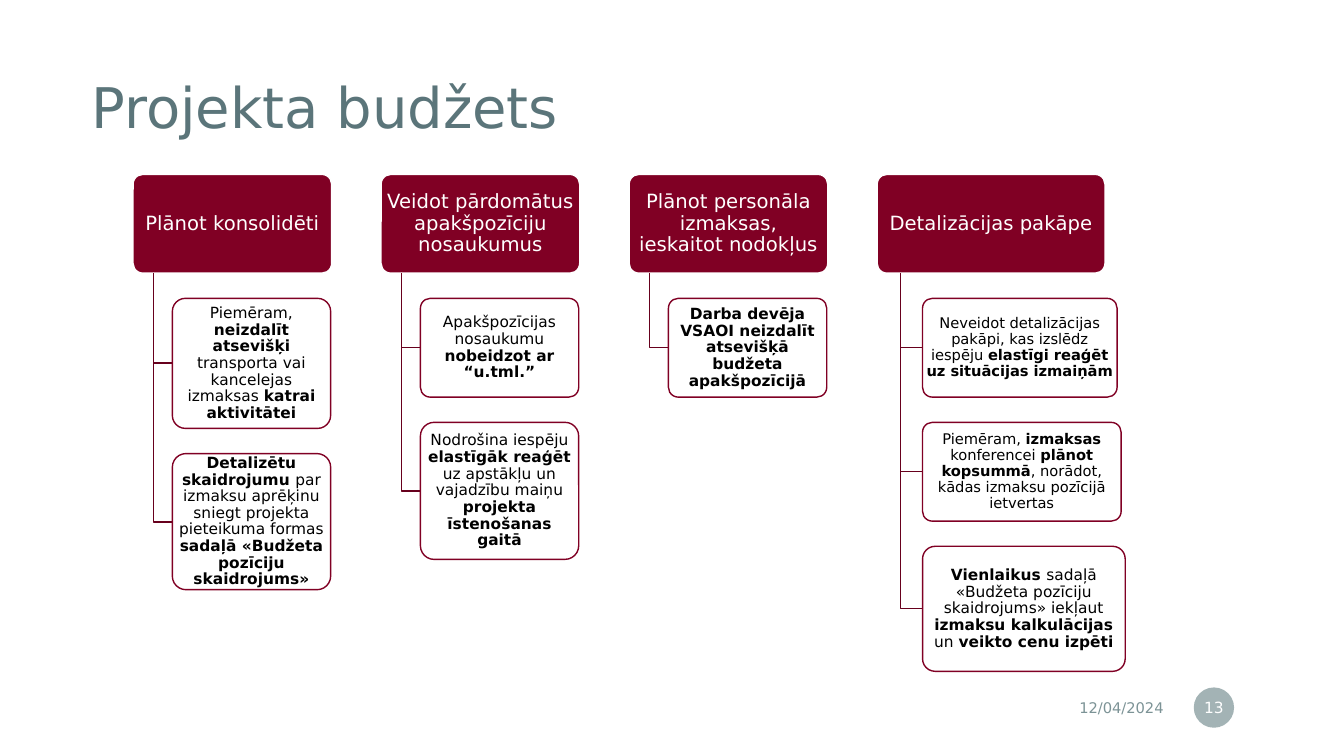
import pptx
import pptx.util
from lxml import etree
from pptx.dml.color import RGBColor
from pptx.enum.shapes import MSO_SHAPE
from pptx.enum.text import MSO_ANCHOR, MSO_AUTO_SIZE, PP_ALIGN
from pptx.oxml.ns import qn

PX = 9144  # 100 px to the inch
FONT = "DejaVu Sans"
MAROON = RGBColor(0x80, 0x00, 0x24)
DARK_MAROON = RGBColor(0x67, 0x00, 0x1D)
SLATE = RGBColor(0x5B, 0x75, 0x7A)
GREY = RGBColor(0x7C, 0x93, 0x96)
WHITE = RGBColor(0xFF, 0xFF, 0xFF)
BLACK = RGBColor(0x00, 0x00, 0x00)

HEADER_HEIGHT = 98
COLUMN_GAP = 49
CARD_GAP = 25

# Header, header width, then cards: width, height, text size, text with *bold* parts
COLUMNS = [
    ("Plānot konsolidēti", 197, [
        (157, 129, 11, "Piemēram, *neizdalīt atsevišķi *transporta vai kancelejas "
                       "izmaksas *katrai aktivitātei*"),
        (157, 135, 11, "*Detalizētu skaidrojumu *par izmaksu aprēķinu sniegt projekta "
                       "pieteikuma formas *sadaļā «Budžeta pozīciju skaidrojums»*"),
    ]),
    ("Veidot pārdomātus apakšpozīciju nosaukumus", 197, [
        (157, 98, 11, "Apakšpozīcijas nosaukumu *nobeidzot ar “u.tml.”*"),
        (157, 136, 11, "Nodrošina iespēju *elastīgāk reaģēt *uz apstākļu un vajadzību "
                       "maiņu *projekta īstenošanas gaitā*"),
    ]),
    ("Plānot personāla izmaksas, ieskaitot nodokļus", 197, [
        (157, 98, 11, "*Darba devēja VSAOI neizdalīt atsevišķā budžeta apakšpozīcijā*"),
    ]),
    ("Detalizācijas pakāpe", 226, [
        (193, 98, 10.5, "Neveidot detalizācijas pakāpi, kas izslēdz iespēju "
                        "*elastīgi reaģēt uz situācijas izmaiņām*"),
        (197, 98, 10.5, "Piemēram, *izmaksas* konferencei *plānot kopsummā*, norādot, "
                        "kādas izmaksu pozīcijā ietvertas"),
        (201, 124, 11, "*Vienlaikus *sadaļā «Budžeta pozīciju skaidrojums» iekļaut "
                       "*izmaksu kalkulācijas *un *veikto cenu izpēti*"),
    ]),
]


def to_emu(*lengths):
    return [round(length * PX) for length in lengths]


def write(shape, text, size, color, align=PP_ALIGN.CENTER, insets=(0, 0), spacing=0.9):
    """Fill the shape with one paragraph; parts between asterisks are bold."""
    frame = shape.text_frame
    frame.word_wrap = True
    frame.auto_size = MSO_AUTO_SIZE.NONE
    frame.vertical_anchor = MSO_ANCHOR.MIDDLE
    frame.margin_left, frame.margin_top = to_emu(*insets)
    frame.margin_right, frame.margin_bottom = to_emu(*insets)
    paragraph = frame.paragraphs[0]
    paragraph.alignment = align
    paragraph.line_spacing = spacing
    paragraph.font.name = FONT
    paragraph.font.size = pptx.util.Pt(size)
    paragraph.font.color.rgb = color
    for index, part in enumerate(text.split("*")):
        if part:
            run = paragraph.add_run()
            run.text = part
            if index % 2:
                run.font.bold = True


def add_rounded_box(slide, box, fill, line):
    shape = slide.shapes.add_shape(MSO_SHAPE.ROUNDED_RECTANGLE, *to_emu(*box))
    shape.adjustments[0] = 0.1
    shape.shadow.inherit = False
    shape.fill.solid()
    shape.fill.fore_color.rgb = fill
    shape.line.color.rgb = line
    shape.line.width = pptx.util.Pt(1)
    return shape


def add_branch(slide, trunk_x, top, card_x, middle):
    """Draw the elbow from a header's foot to the middle of a card's left side."""
    builder = slide.shapes.build_freeform(trunk_x, top, scale=PX)
    builder.add_line_segments([(trunk_x, middle), (card_x, middle)], close=False)
    branch = builder.convert_to_shape()
    branch.shadow.inherit = False
    branch.fill.background()
    branch.line.color.rgb = DARK_MAROON
    branch.line.width = pptx.util.Pt(1)


def add_column(slide, left, top, header, header_width, cards):
    header_box = add_rounded_box(
        slide, (left, top, header_width, HEADER_HEIGHT), MAROON, WHITE)
    write(header_box, header, 14, WHITE, insets=(3, 2))
    header_foot = top + HEADER_HEIGHT
    trunk_x = left + round(header_width * 0.1)
    card_x = left + round(header_width * 0.2)
    card_top = header_foot + CARD_GAP
    for width, height, size, text in cards:
        add_branch(slide, trunk_x, header_foot, card_x, card_top + height / 2)
        card = add_rounded_box(slide, (card_x, card_top, width, height), WHITE, MAROON)
        write(card, text, size, BLACK)
        card_top += height + CARD_GAP


def add_columns(slide, left, top):
    for header, header_width, cards in COLUMNS:
        add_column(slide, left, top, header, header_width, cards)
        left += header_width + COLUMN_GAP


def add_title(slide, box):
    title = slide.shapes.title
    title.left, title.top, title.width, title.height = to_emu(*box)
    write(title, "Projekta budžets", 40, SLATE, PP_ALIGN.LEFT, (0, 20))


def add_footer(slide, left, top, width, height):
    """Set the date and, at the right end, the page number in its disc."""
    date = slide.shapes.add_textbox(*to_emu(left, top + 2, 301, 35))
    write(date, "12/04/2024", 10.5, GREY, PP_ALIGN.RIGHT, (10, 5), 1)
    disc = slide.shapes.add_shape(
        MSO_SHAPE.OVAL, *to_emu(left + width - height, top, height, height))
    disc.shadow.inherit = False
    disc.line.fill.background()
    disc.fill.solid()
    disc.fill.fore_color.rgb = GREY
    disc_color = disc.fill._xPr.find(qn("a:solidFill"))[0]
    etree.SubElement(disc_color, qn("a:alpha")).set("val", "70000")
    write(disc, "13", 11, WHITE, insets=(2, 5), spacing=1)


def main():
    presentation = pptx.Presentation()
    presentation.slide_width, presentation.slide_height = to_emu(1333, 750)
    slide = presentation.slides.add_slide(presentation.slide_layouts[5])
    add_title(slide, (91, 48, 873, 123))
    add_footer(slide, 863, 682, 361, 40)
    add_columns(slide, 132, 173)
    presentation.save("out.pptx")


if __name__ == "__main__":
    main()
